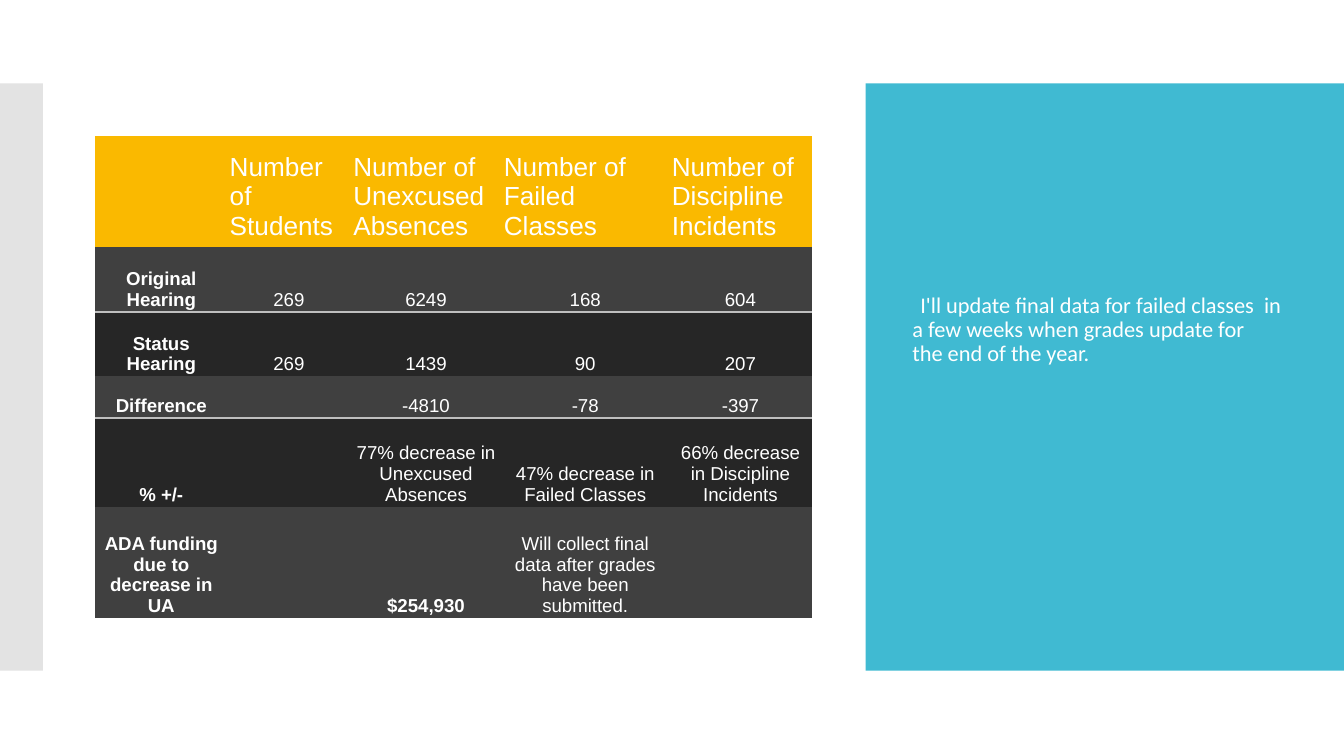
from lxml import etree
from pptx import Presentation
from pptx.dml.color import RGBColor
from pptx.enum.shapes import MSO_SHAPE
from pptx.enum.text import MSO_ANCHOR, PP_ALIGN
from pptx.oxml.ns import qn
from pptx.util import Inches, Pt

RECT = MSO_SHAPE.RECTANGLE
MIDDLE, BOTTOM = MSO_ANCHOR.MIDDLE, MSO_ANCHOR.BOTTOM
LEFT, CENTER = PP_ALIGN.LEFT, PP_ALIGN.CENTER

WHITE, TEAL, PALE = "FFFFFF", "40BAD2", "E3E3E3"
GOLD, GREY, DARK, RULE = "FAB900", "404040", "262626", "BFBFBF"
PLAIN = "{2D5ABB26-0587-4C30-8999-92F81FD0307C}"  # no style, no grid

COLS = [0.98, 0.92, 1.12, 1.25, 1.06]
ROWS = [0.83, 0.48, 0.48, 0.31, 0.66, 0.83]
RULED = (1, 3)  # rows with a line below
DATA = [
    ["", "Number of Students", "Number of Unexcused Absences",
     "Number of Failed Classes", "Number of Discipline Incidents"],
    ["Original Hearing", "269", "6249", "168", "604"],
    ["Status Hearing", "269", "1439", "90", "207"],
    ["Difference", "", "-4810", "-78", "-397"],
    ["% +/-", "", "77% decrease in Unexcused Absences",
     "47% decrease in Failed Classes", "66% decrease in Discipline Incidents"],
    ["ADA funding due to decrease in UA", "", "$254,930",
     "Will collect final data after grades have been submitted.", ""],
]
# A tilde stands for a space that does not break
NOTE = ("I'll update final~data for failed~classes~ in a few weeks when~"
        "grades update for the~end of the year.").replace("~", chr(160))


def color(text):
    return RGBColor.from_string(text)


def style(para, name, size, bold=False):
    font = para.font
    font.name, font.size, font.bold = name, Pt(size), bold
    font.color.rgb = color(WHITE)


def add_block(slide, box, fill):
    block = slide.shapes.add_shape(RECT, *map(Inches, box))
    block.shadow.inherit = False
    block.fill.solid()
    block.fill.fore_color.rgb = color(fill)
    block.line.fill.background()


def set_rules(cell, row):
    """Set top and bottom lines; borders come before the cell fill."""
    props = cell._tc.get_or_add_tcPr()
    sides = (("lnT", row - 1 in RULED), ("lnB", row in RULED))
    for place, (side, shown) in enumerate(sides):
        line = etree.Element(qn("a:" + side), w=str(Pt(1)))
        if shown:
            fill = etree.SubElement(line, qn("a:solidFill"))
            etree.SubElement(fill, qn("a:srgbClr"), val=RULE)
        else:
            etree.SubElement(line, qn("a:noFill"))
        props.insert(place, line)


def fill_cell(cell, text, row, col):
    head = row == 0
    cell.fill.solid()
    cell.fill.fore_color.rgb = color(GOLD if head else GREY if row % 2 else DARK)
    cell.margin_left = cell.margin_right = Inches(0.02)
    cell.margin_top, cell.margin_bottom = Inches(0.09), Inches(0.01)
    cell.vertical_anchor = MIDDLE if head else BOTTOM
    cell.text = text
    para = cell.text_frame.paragraphs[0]
    para.alignment = LEFT if head else CENTER
    bold = not head and (col == 0 or text.startswith("$"))
    style(para, "Arial", 14 if head else 10, bold)
    set_rules(cell, row)


def add_results(slide, left, top):
    box = (left, top, sum(COLS), sum(ROWS))
    frame = slide.shapes.add_table(len(ROWS), len(COLS), *map(Inches, box))
    table = frame.table
    table.first_row = table.horz_banding = False
    table._tbl.tblPr.find(qn("a:tableStyleId")).text = PLAIN
    for col, width in zip(table.columns, COLS):
        col.width = Inches(width)
    for row, height in zip(table.rows, ROWS):
        row.height = Inches(height)
    for r, texts in enumerate(DATA):
        for c, text in enumerate(texts):
            fill_cell(table.cell(r, c), text, r, c)


def add_panel(slide, left, top, width, height):
    add_block(slide, (left, top, width, height), TEAL)
    # Note inside the panel
    box = (left + 0.25, top + 1.52, 3, 2.59)
    frame = slide.shapes.add_textbox(*map(Inches, box)).text_frame
    frame.word_wrap = True
    para = frame.paragraphs[0]
    para.text = NOTE
    para.line_spacing = 0.9
    para.space_after = Pt(6)
    para._p.get_or_add_pPr().set("indent", str(Inches(0.06)))
    style(para, "Calibri", 12)


def main():
    deck = Presentation()
    deck.slide_width, deck.slide_height = Inches(10), Inches(10 * 9 / 16)
    slide = deck.slides.add_slide(deck.slide_layouts[6])
    # Side panel and left strip share one band
    top, height = 0.62, 4.37
    add_panel(slide, 6.44, top, 3.56, height)
    add_block(slide, (0, top, 0.32, height), PALE)
    # Results table
    add_results(slide, 0.71, 1.01)
    deck.save("out.pptx")


if __name__ == "__main__":
    main()
